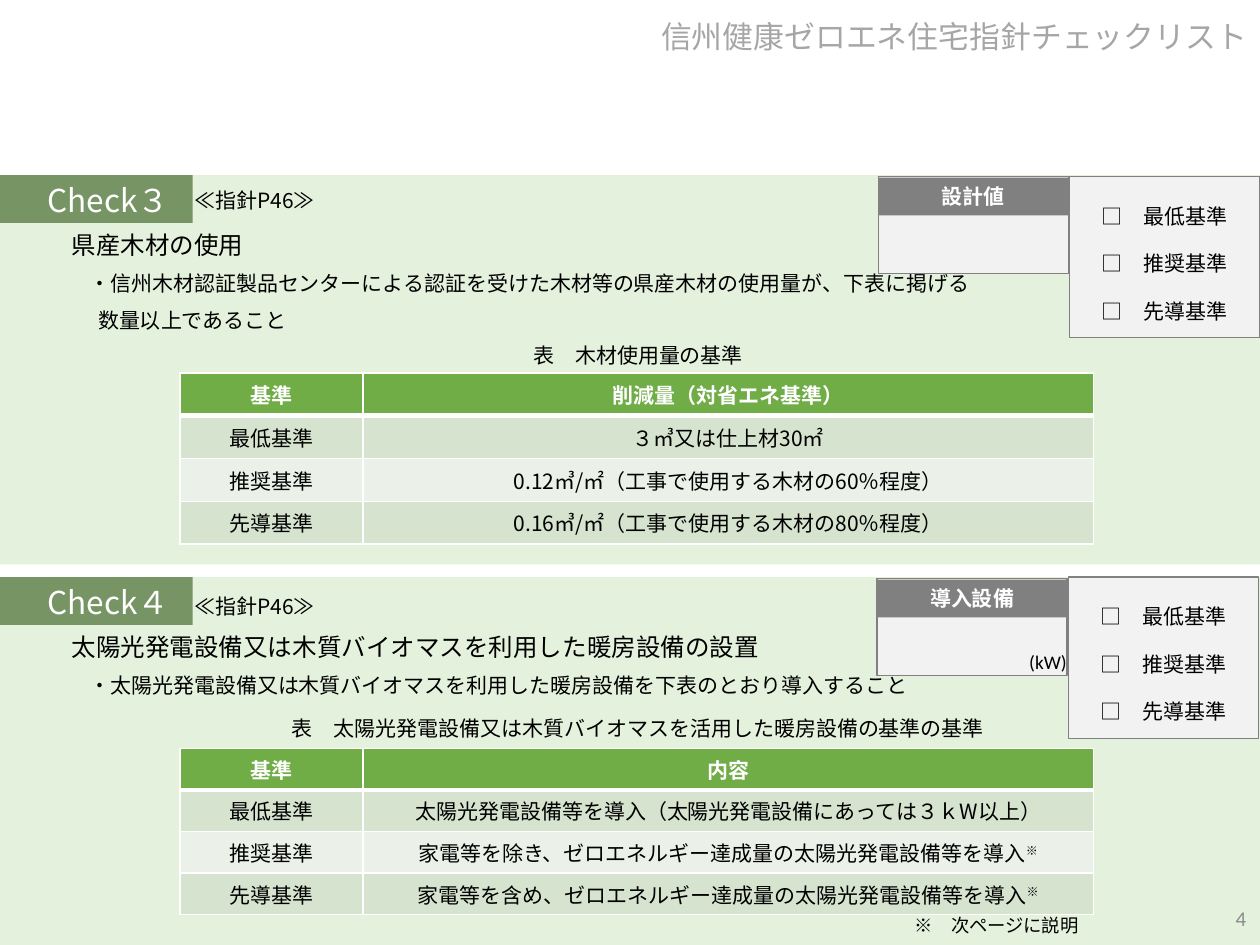
from lxml import etree
from pptx import Presentation
from pptx import util as u
from pptx.dml.color import RGBColor
from pptx.enum import shapes, text
from pptx.oxml import ns

JAPANESE = "Noto Sans CJK JP"
LEFT, CENTER, RIGHT = text.PP_ALIGN.LEFT, text.PP_ALIGN.CENTER, text.PP_ALIGN.RIGHT
TOP, MIDDLE = text.MSO_ANCHOR.TOP, text.MSO_ANCHOR.MIDDLE
color = RGBColor.from_string

presentation = Presentation()
presentation.slide_width, presentation.slide_height = u.Inches(10), u.Inches(7.5)
slide = presentation.slides.add_slide(presentation.slide_layouts[6])


def write(frame, lines, size=12, ink="000000", align=LEFT, anchor=TOP,
          font=JAPANESE, bold=False, spacing=None, before=None):
    """Fill a text frame, one paragraph a line; a trailing ※ is raised."""
    frame.word_wrap = True
    frame.vertical_anchor = anchor
    for index, line in enumerate(lines):
        paragraph = frame.add_paragraph() if index else frame.paragraphs[0]
        body = line.removesuffix("※")
        paragraph.add_run().text = body
        if body != line:
            mark = paragraph.add_run()
            mark.text = "※"
            mark.font._element.set("baseline", "30000")
        paragraph.alignment = align
        paragraph.line_spacing = spacing
        if before is not None:
            paragraph.space_before = u.Pt(before)
        paragraph.font.size = u.Pt(size)
        paragraph.font.bold = bold
        paragraph.font.color.rgb = color(ink)
        paragraph.font.name = font
        east_asian = etree.SubElement(paragraph.font._element, ns.qn("a:ea"))
        east_asian.set("typeface", JAPANESE)
    return frame.paragraphs


def add_box(left, top, width, height, fill=None, line=None):
    """Add a filled rectangle, or a text box when there is no fill."""
    area = [u.Inches(value) for value in (left, top, width, height)]
    if fill is None:
        return slide.shapes.add_textbox(*area)
    shape = slide.shapes.add_shape(shapes.MSO_SHAPE.RECTANGLE, *area)
    shape.shadow.inherit = False
    shape.fill.solid()
    shape.fill.fore_color.rgb = color(fill)
    if line:
        shape.line.color.rgb = color(line)
        shape.line.width = u.Pt(0.75)
    else:
        shape.line.fill.background()
    return shape


# Page title
write(add_box(0, 0, 10, 0.61).text_frame, ["信州健康ゼロエネ住宅指針チェックリスト"],
      17.6, "A6A6A6", RIGHT, MIDDLE, spacing=0.9)

LEVELS = ["最低基準", "推奨基準", "先導基準"]
sections = [
    {
        "top": 1.39, "height": 3.09, "text_top": 1.42, "reference_top": 1.44,
        "check": "Check３", "heading": "県産木材の使用",
        "details": ["・信州木材認証製品センターによる認証を受けた木材等の県産木材の使用量が、下表に掲げる",
                    "数量以上であること"],
        "field": "設計値", "field_left": 6.97, "field_top": 1.4, "levels_top": 1.4,
        "caption": "表　木材使用量の基準", "caption_top": 2.67,
        "table_top": 2.96, "row_height": 0.34,
        "column": "削減量（対省エネ基準）",
        "values": ["３㎥又は仕上材30㎡",
                   "0.12㎥/㎡（工事で使用する木材の60％程度）",
                   "0.16㎥/㎡（工事で使用する木材の80％程度）"],
    },
    {
        "top": 4.58, "height": 2.92, "text_top": 4.61, "reference_top": 4.66,
        "check": "Check４", "heading": "太陽光発電設備又は木質バイオマスを利用した暖房設備の設置",
        "details": ["・太陽光発電設備又は木質バイオマスを利用した暖房設備を下表のとおり導入すること"],
        "field": "導入設備", "field_left": 6.96, "field_top": 4.59, "levels_top": 4.58,
        "caption": "表　太陽光発電設備又は木質バイオマスを活用した暖房設備の基準の基準",
        "caption_top": 5.63, "table_top": 5.94, "row_height": 0.33,
        "column": "内容",
        "values": ["太陽光発電設備等を導入（太陽光発電設備にあっては３ｋW以上）",
                   "家電等を除き、ゼロエネルギー達成量の太陽光発電設備等を導入※",
                   "家電等を含め、ゼロエネルギー達成量の太陽光発電設備等を導入※"],
    },
]

for section in sections:
    # Dark tag under a translucent green panel
    add_box(0, section["top"], 1.53, 0.38, "385723")
    panel = add_box(0, section["top"], 10, section["height"], "C5E0B4")
    panel_color = panel.fill._xPr.find(ns.qn("a:solidFill"))[0]
    etree.SubElement(panel_color, ns.qn("a:alpha")).set("val", "45000")

    # Check number, heading and details
    paragraphs = write(add_box(0.28, section["text_top"], 9.42, 1.62).text_frame,
                       [section["check"], section["heading"], *section["details"]],
                       spacing=0.9, before=8)
    paragraphs[0].font.size = u.Pt(18)
    paragraphs[0].font.color.rgb = color("FFFFFF")
    paragraphs[1].font.size = u.Pt(14)
    for paragraph, indent in zip(paragraphs[1:], (0.19, 0.33, 0.4)):
        paragraph._p.get_or_add_pPr().set("marL", str(u.Inches(indent)))
    write(add_box(1.36, section["reference_top"], 1.32, 0.3).text_frame,
          ["≪指針P46≫"], align=CENTER)

    # Table of standards with its caption
    write(add_box(1.45, section["caption_top"], 7.23, 0.3).text_frame,
          [section["caption"]], align=CENTER)
    rows = [("基準", section["column"]), *zip(LEVELS, section["values"])]
    height = section["row_height"]
    table = slide.shapes.add_table(
        len(rows), 2, u.Inches(1.43), u.Inches(section["table_top"]),
        u.Inches(7.25), u.Inches(height * len(rows))).table
    for column, width in zip(table.columns, (1.45, 5.8)):
        column.width = u.Inches(width)
    for row_index, row in enumerate(rows):
        table.rows[row_index].height = u.Inches(height)
        header = row_index == 0
        for column_index, value in enumerate(row):
            cell = table.cell(row_index, column_index)
            cell.margin_top = cell.margin_bottom = u.Inches(0.04)
            cell.vertical_anchor = MIDDLE
            write(cell.text_frame, [value], ink="FFFFFF" if header else "000000",
                  align=CENTER, bold=header)
            properties = cell._tc.get_or_add_tcPr()
            for side in "LRTB":
                thick = (row_index, side) in ((0, "B"), (1, "T"))
                border = etree.SubElement(properties, ns.qn("a:ln" + side))
                border.set("w", str(u.Pt(3 if thick else 1)))
                border_fill = etree.SubElement(border, ns.qn("a:solidFill"))
                etree.SubElement(border_fill, ns.qn("a:srgbClr")).set("val", "FFFFFF")
            cell.fill.solid()
            cell.fill.fore_color.rgb = color(
                "70AD47" if header else "D5E3CF" if row_index % 2 else "EBF1E9")

    # Levels to tick
    left, top = section["field_left"], section["field_top"]
    levels = add_box(left + 1.52, section["levels_top"], 1.51, 1.28, "F2F2F2", "808080")
    write(levels.text_frame, ["□　" + level for level in LEVELS],
          align=CENTER, anchor=MIDDLE, spacing=1.5, before=5.5)

    # Entry field with its label
    add_box(left, top, 1.51, 0.77, "F2F2F2", "808080")
    write(add_box(left, top + 0.01, 1.51, 0.3, "808080").text_frame, [section["field"]],
          ink="FFFFFF", align=CENTER, anchor=MIDDLE, font="Calibri", bold=True)

# Unit, footnote and page number
write(add_box(8.07, 5.11, 0.53, 0.29).text_frame, ["(kW)"], 11, font="Calibri")
write(add_box(1.43, 7.21, 7.23, 0.29).text_frame, ["※　次ページに説明"], 10.5, align=RIGHT)
write(add_box(7.74, 7.09, 2.25, 0.4).text_frame, ["4"], 12, "8C8C8C", RIGHT, MIDDLE, "Calibri")

presentation.save("out.pptx")
